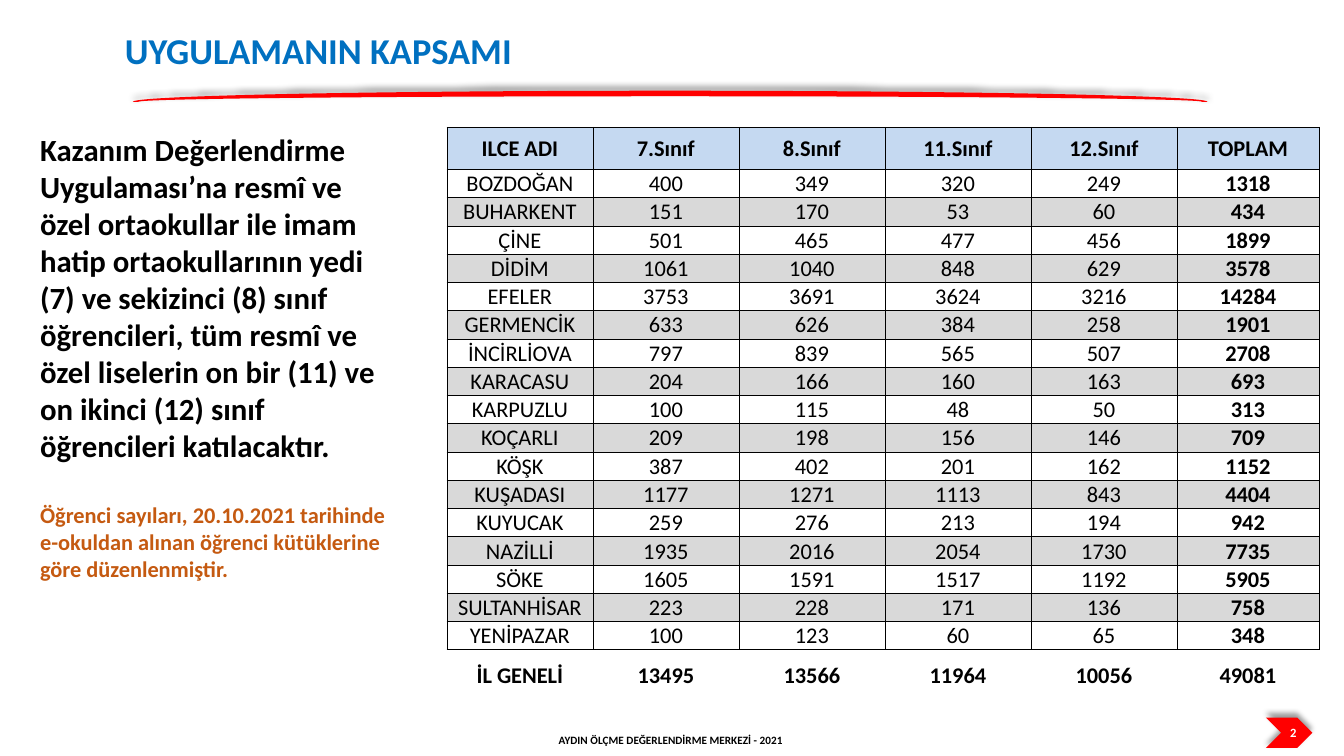
import dataclasses
import typing

import lxml.etree
import pptx
import pptx.dml.color
import pptx.enum.shapes
import pptx.enum.text
import pptx.oxml.ns
import pptx.util

Pt = pptx.util.Pt
Shape = pptx.enum.shapes.MSO_SHAPE
Align = pptx.enum.text.PP_ALIGN
Anchor = pptx.enum.text.MSO_ANCHOR
qn = pptx.oxml.ns.qn

FONT = "Calibri"
NO_STYLE = "{2D5ABB26-0587-4C30-8999-92F81FD0307C}"
COLORS = {
    "black": "000000", "white": "FFFFFF", "red": "FF0000", "title": "0070C0",
    "note": "C55A11", "header": "C5D9F1", "band": "D9D9D9",
}


@dataclasses.dataclass
class Area:
    left: float
    top: float
    width: float
    height: float

    def lengths(self) -> list:
        return [Pt(value) for value in dataclasses.astuple(self)]


@dataclasses.dataclass
class Ornament:
    preset: typing.Any
    area: Area


@dataclasses.dataclass
class Label:
    text: str
    area: Area
    size: float
    color: str = "black"
    align: typing.Any = Align.LEFT
    anchor: typing.Any = Anchor.TOP


ORNAMENTS = [
    Ornament(Shape.CHEVRON, Area(904.3, 512.6, 33.1, 21.6)),
    Ornament(Shape.BLOCK_ARC, Area(95, 64.8, 767.5, 15.8)),
]
LABELS = [
    Label("2", Area(904.3, 514.1, 38.9, 18), 9, "white", Align.CENTER),
    Label("AYDIN ÖLÇME DEĞERLENDİRME MERKEZİ - 2021", Area(294.5, 520.6, 369.4, 15.8), 8,
          align=Align.CENTER, anchor=Anchor.MIDDLE),
    Label("UYGULAMANIN KAPSAMI", Area(82.1, 16.6, 341.3, 41), 26, "title"),
    Label("Kazanım Değerlendirme Uygulaması’na resmî ve özel ortaokullar ile imam hatip "
          "ortaokullarının yedi (7) ve sekizinci (8) sınıf öğrencileri, tüm resmî ve özel "
          "liselerin on bir (11) ve on ikinci (12) sınıf öğrencileri katılacaktır.",
          Area(21.6, 90, 263.5, 258.5), 22),
]
NOTE = ("Öğrenci sayıları, 20.10.2021 tarihinde e-okuldan alınan öğrenci kütüklerine "
        "göre düzenlenmiştir.")

TABLE_AREA = Area(319.2, 90.8, 623, 409)
COLUMN_WIDTHS = [104.3] * 5 + [101.5]
HEADER_HEIGHT, ROW_HEIGHT, TOTAL_HEIGHT = 30.2, 20.2, 36
ROWS = [
    ("ILCE ADI", "7.Sınıf", "8.Sınıf", "11.Sınıf", "12.Sınıf", "TOPLAM"),
    ("BOZDOĞAN", 400, 349, 320, 249, 1318),
    ("BUHARKENT", 151, 170, 53, 60, 434),
    ("ÇİNE", 501, 465, 477, 456, 1899),
    ("DİDİM", 1061, 1040, 848, 629, 3578),
    ("EFELER", 3753, 3691, 3624, 3216, 14284),
    ("GERMENCİK", 633, 626, 384, 258, 1901),
    ("İNCİRLİOVA", 797, 839, 565, 507, 2708),
    ("KARACASU", 204, 166, 160, 163, 693),
    ("KARPUZLU", 100, 115, 48, 50, 313),
    ("KOÇARLI", 209, 198, 156, 146, 709),
    ("KÖŞK", 387, 402, 201, 162, 1152),
    ("KUŞADASI", 1177, 1271, 1113, 843, 4404),
    ("KUYUCAK", 259, 276, 213, 194, 942),
    ("NAZİLLİ", 1935, 2016, 2054, 1730, 7735),
    ("SÖKE", 1605, 1591, 1517, 1192, 5905),
    ("SULTANHİSAR", 223, 228, 171, 136, 758),
    ("YENİPAZAR", 100, 123, 60, 65, 348),
    ("İL GENELİ", 13495, 13566, 11964, 10056, 49081),
]


def rgb(name: str) -> pptx.dml.color.RGBColor:
    return pptx.dml.color.RGBColor.from_string(COLORS[name])


def write(para, text: str, *, size: float, color: str = "black", bold: bool = True,
          align=Align.LEFT, before: float = 0) -> None:
    para.alignment = align
    if before:
        para.space_before = Pt(before)
    span = para.add_run()
    span.text = text
    span.font.name, span.font.size, span.font.bold = FONT, Pt(size), bold
    span.font.color.rgb = rgb(color)


def add_solid(parent, color: str):
    fill = lxml.etree.SubElement(parent, qn("a:solidFill"))
    return lxml.etree.SubElement(fill, qn("a:srgbClr"), val=COLORS[color])


def draw_ornament(page, ornament: Ornament) -> None:
    shape = page.shapes.add_shape(ornament.preset, *ornament.area.lengths())
    shape.fill.solid()
    shape.fill.fore_color.rgb = rgb("red")
    shape.line.fill.background()
    # Soft shadow cast upwards
    shape.shadow.inherit = False
    effects = shape._element.spPr.find(qn("a:effectLst"))
    shadow = lxml.etree.SubElement(
        effects, qn("a:outerShdw"), blurRad=str(Pt(4)), dist=str(Pt(3)),
        dir=str(270 * 60000), algn="b", rotWithShape="0")
    shade = lxml.etree.SubElement(shadow, qn("a:srgbClr"), val=COLORS["black"])
    lxml.etree.SubElement(shade, qn("a:alpha"), val="40000")


def draw_label(page, label: Label):
    frame = page.shapes.add_textbox(*label.area.lengths()).text_frame
    frame.word_wrap = True
    frame.vertical_anchor = label.anchor
    write(frame.paragraphs[0], label.text, size=label.size, color=label.color, align=label.align)
    return frame


def add_borders(cell, sides: str) -> None:
    for side in sides:
        line = lxml.etree.SubElement(cell._tc.get_or_add_tcPr(), qn(f"a:ln{side}"), w=str(Pt(0.5)))
        add_solid(line, "black")


def draw_table(page) -> None:
    table = page.shapes.add_table(len(ROWS), len(COLUMN_WIDTHS), *TABLE_AREA.lengths()).table
    table.first_row = table.horz_banding = False
    table._tbl.tblPr.find(qn("a:tableStyleId")).text = NO_STYLE
    for column, width in zip(table.columns, COLUMN_WIDTHS):
        column.width = Pt(width)
    last_row, last_column = len(ROWS) - 1, len(COLUMN_WIDTHS) - 1
    for row, values in enumerate(ROWS):
        is_header, is_total = row == 0, row == last_row
        table.rows[row].height = Pt(
            HEADER_HEIGHT if is_header else TOTAL_HEIGHT if is_total else ROW_HEIGHT)
        for column, value in enumerate(values):
            cell = table.cell(row, column)
            cell.margin_left = cell.margin_right = cell.margin_top = Pt(0.7)
            cell.margin_bottom = 0
            cell.vertical_anchor = Anchor.MIDDLE
            add_borders(cell, "T" if is_total else "LRTB")
            if is_header or (row % 2 == 0 and not is_total):
                cell.fill.solid()
                cell.fill.fore_color.rgb = rgb("header" if is_header else "band")
            else:
                cell.fill.background()
            write(cell.text_frame.paragraphs[0], str(value), size=16, align=Align.CENTER,
                  bold=is_header or is_total or column == last_column)


def main() -> None:
    deck = pptx.Presentation()
    deck.slide_width, deck.slide_height = Pt(960), Pt(540)
    page = deck.slides.add_slide(deck.slide_layouts[6])
    # Red arc and page marker
    for ornament in ORNAMENTS:
        draw_ornament(page, ornament)
    # Texts; the note follows the last one
    for label in LABELS:
        frame = draw_label(page, label)
    write(frame.add_paragraph(), NOTE, size=16, color="note", before=26.8)
    # Student numbers by district
    draw_table(page)
    deck.save("out.pptx")


if __name__ == "__main__":
    main()
